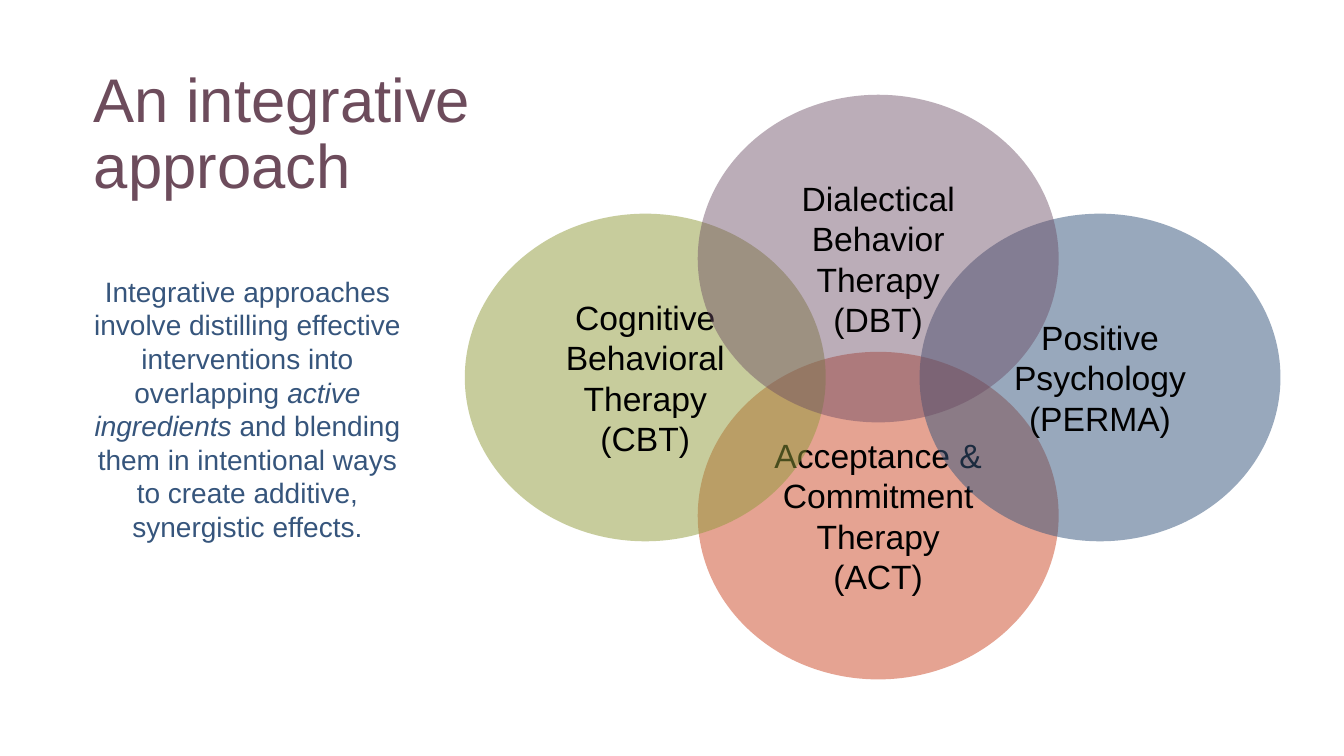
from lxml.etree import SubElement
from pptx import Presentation
from pptx.dml.color import RGBColor
from pptx.enum.shapes import MSO_SHAPE
from pptx.enum.text import MSO_ANCHOR as ANCHOR, MSO_AUTO_SIZE as AUTO_SIZE, PP_ALIGN as ALIGN
from pptx.oxml.ns import qn
from pptx.util import Pt

PX = 9144
FONT = "Arial"
BLACK, PLUM, BLUE = "000000", "6D4C5C", "36557C"
CIRCLE_WIDTH, CIRCLE_HEIGHT = 358, 325
CIRCLES = [
    (692, 349, "CC4927", 50, "Acceptance & Commitment Therapy\n(ACT)"),
    (461, 212, "909A3B", 50, "Cognitive Behavioral Therapy\n(CBT)"),
    (912, 212, "36557C", 51, "Positive Psychology\n(PERMA)"),
    (692, 94, "6A4A62", 45, "Dialectical Behavior\nTherapy\n(DBT)"),
]
SUMMARY = [
    ("Integrative approaches involve distilling effective interventions into overlapping ", False),
    ("active ingredients", True),
    (" and blending them in intentional ways to create additive, synergistic effects.", False),
]


def color(value):
    return RGBColor.from_string(value)


class SlideBuilder:
    def __init__(self, presentation):
        self.slide = presentation.slides.add_slide(presentation.slide_layouts[1])

    def place(self, shape, left, top, width, height):
        shape.left, shape.top = left * PX, top * PX
        shape.width, shape.height = width * PX, height * PX

    def format_text(self, text_frame, size, text_color, alignment, spacing=1.0):
        text_frame.word_wrap = True
        for paragraph in text_frame.paragraphs:
            paragraph.alignment = alignment
            paragraph.line_spacing = spacing
            paragraph.space_before = Pt(0)
            for run in paragraph.runs:
                run.font.name = FONT
                run.font.size = Pt(size)
                run.font.color.rgb = color(text_color)

    def title(self, text, left, top, width, height):
        shape = self.slide.shapes.title
        self.place(shape, left, top, width, height)
        text_frame = shape.text_frame
        text_frame.text = text
        text_frame.auto_size = AUTO_SIZE.NONE
        text_frame.vertical_anchor = ANCHOR.MIDDLE
        self.format_text(text_frame, 44, PLUM, ALIGN.LEFT, 0.9)

    def body(self, pieces, left, top, width, height):
        shape = self.slide.placeholders[1]
        self.place(shape, left, top, width, height)
        text_frame = shape.text_frame
        text_frame.auto_size = AUTO_SIZE.SHAPE_TO_FIT_TEXT
        text_frame.vertical_anchor = ANCHOR.TOP
        paragraph = text_frame.paragraphs[0]
        properties = paragraph._p.get_or_add_pPr()
        properties.set("marL", "0")
        properties.set("indent", "0")
        SubElement(properties, qn("a:buNone"))
        for text, italic in pieces:
            run = paragraph.add_run()
            run.text = text
            run.font.italic = italic
        self.format_text(text_frame, 20, BLUE, ALIGN.CENTER)

    def circle(self, left, top, fill_color, opacity, text):
        shape = self.slide.shapes.add_shape(
            MSO_SHAPE.OVAL, left * PX, top * PX, CIRCLE_WIDTH * PX, CIRCLE_HEIGHT * PX)
        shape.shadow.inherit = False
        shape.line.fill.background()
        shape.fill.solid()
        shape.fill.fore_color.rgb = color(fill_color)
        fill = shape._element.spPr.find(qn("a:solidFill"))
        SubElement(fill[0], qn("a:alpha")).set("val", str(opacity * 1000))
        shape.text_frame.text = text
        shape.text_frame.vertical_anchor = ANCHOR.MIDDLE
        self.format_text(shape.text_frame, 24, BLACK, ALIGN.CENTER)


def main():
    presentation = Presentation()
    presentation.slide_width, presentation.slide_height = 1333 * PX, 750 * PX
    builder = SlideBuilder(presentation)
    builder.title("An integrative\napproach", 83, 42, 517, 185)
    builder.body(SUMMARY, 83, 267, 325, 279)
    for circle in CIRCLES:
        builder.circle(*circle)
    presentation.save("out.pptx")


if __name__ == "__main__":
    main()
